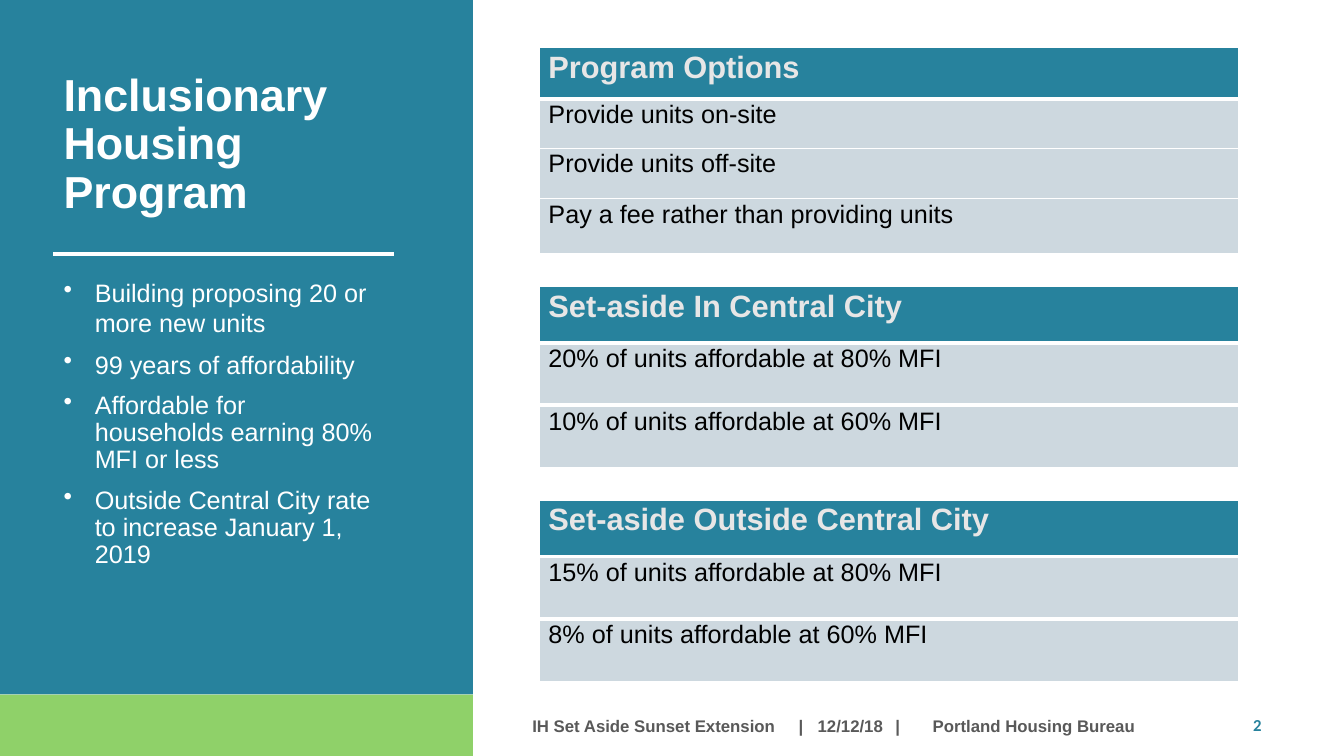
from lxml import etree
from pptx import Presentation
from pptx.dml.color import RGBColor
from pptx.enum import shapes, text
from pptx.oxml.ns import qn
from pptx.util import Inches, Pt

# Content
TITLE = "Inclusionary \vHousing\vProgram"
# Bullet text, line spacing, space before in points
BULLETS = [
    ("Building proposing 20 or more new units", None, 8.7),
    ("99 years of affordability", Pt(19.7), 9.9),
    ("Affordable for households earning 80% MFI or less", 0.9, 9.5),
    ("Outside Central City rate to increase January 1, 2019", 0.9, 9.5),
]
# Top, row heights, rule between body rows in points, rows (header first)
TABLES = [
    (0.47, (0.51, 0.49, 0.5, 0.55), 1,
     ("Program Options", "Provide units on-site", "Provide units off-site",
      "Pay a fee rather than providing units")),
    (2.84, (0.56, 0.62, 0.62), 3,
     ("Set-aside In Central City", "20% of units affordable at 80% MFI",
      "10% of units affordable at 60% MFI")),
    (4.96, (0.56, 0.62, 0.62), 3,
     ("Set-aside Outside Central City", "15% of units affordable at 80% MFI",
      "8% of units affordable at 60% MFI")),
]
FOOTER = "IH Set Aside Sunset Extension\t|\t12/12/18\t|\tPortland Housing Bureau"
FOOTER_TABS = (2.64, 2.83, 3.6, 3.97)
PAGE = "2"

COLORS = {"teal": "27829D", "green": "8FD169", "white": "FFFFFF", "head": "E7E6E6",
          "row": "CDD8DF", "black": "000000", "gray": "595959"}
PANEL_W, PANEL_H = 4.69, 6.89
TABLE_X, TABLE_W = 5.35, 6.93


def rgb(name):
    return RGBColor.from_string(COLORS[name])


def style(p, size, color, bold=False, font="Arial"):
    for r in p.runs:
        r.font.size, r.font.bold, r.font.name = Pt(size), bold, font
        r.font.color.rgb = rgb(color)


def set_frame(tf, top=0):
    tf.word_wrap = True
    tf.auto_size = text.MSO_AUTO_SIZE.NONE
    tf.vertical_anchor = text.MSO_ANCHOR.TOP
    tf.margin_left = tf.margin_right = tf.margin_bottom = 0
    tf.margin_top = Inches(top)


def add_text(s, box, top=0):
    tf = s.shapes.add_textbox(*map(Inches, box)).text_frame
    set_frame(tf, top)
    return tf


def add_panel(s, top, height, color):
    sp = s.shapes.add_shape(shapes.MSO_SHAPE.RECTANGLE, 0, Inches(top),
                            Inches(PANEL_W), Inches(height))
    sp.shadow.inherit = False
    sp.fill.solid()
    sp.fill.fore_color.rgb = rgb(color)
    sp.line.fill.background()


def set_borders(cell, top, bottom):
    tcPr = cell._tc.get_or_add_tcPr()
    for i, (side, width) in enumerate((("L", 1), ("R", 1), ("T", top), ("B", bottom))):
        ln = etree.Element(qn(f"a:ln{side}"), w=str(Pt(width)))
        fill = etree.SubElement(ln, qn("a:solidFill"))
        etree.SubElement(fill, qn("a:srgbClr"), val=COLORS["white"])
        tcPr.insert(i, ln)


def add_table(s, top, heights, rule, rows):
    frame = s.shapes.add_table(len(rows), 1, Inches(TABLE_X), Inches(top),
                               Inches(TABLE_W), Inches(sum(heights)))
    table = frame.table
    rules = [1, 3] + [rule] * (len(rows) - 2) + [1]
    for i, (label, height) in enumerate(zip(rows, heights)):
        head = i == 0
        table.rows[i].height = Inches(height)
        cell = table.cell(i, 0)
        cell.margin_left = Inches(0.09)
        cell.margin_right = cell.margin_bottom = 0
        cell.margin_top = Inches(0.03 if head else 0.02)
        cell.fill.solid()
        cell.fill.fore_color.rgb = rgb("teal" if head else "row")
        set_borders(cell, rules[i], rules[i + 1])
        p = cell.text_frame.paragraphs[0]
        p.text = label
        p.space_before = Pt(2.1 if head else 1.1)
        style(p, 22 if head else 18, "head" if head else "black", head)


prs = Presentation()
prs.slide_width, prs.slide_height = Inches(13.33), Inches(7.5)
s = prs.slides.add_slide(prs.slide_layouts[5])

# Left panel with rule
add_panel(s, 0, PANEL_H, "teal")
add_panel(s, PANEL_H, 7.5 - PANEL_H, "green")
rule = s.shapes.add_connector(shapes.MSO_CONNECTOR.STRAIGHT, Inches(0.53), Inches(2.52),
                              Inches(3.91), Inches(2.52))
rule.line.color.rgb = rgb("white")
rule.line.width = Pt(2.58)
etree.SubElement(rule._element.spPr, qn("a:effectLst"))

# Title, brought in front of the panel
title = s.shapes.title
title.left, title.top, title.width, title.height = map(Inches, (0.63, 0.64, 3.09, 1.55))
s.shapes._spTree.append(title._element)
set_frame(title.text_frame, 0.07)
title.text_frame.text = TITLE
p = title.text_frame.paragraphs[0]
p.alignment = text.PP_ALIGN.LEFT
p.line_spacing, p.space_before = Pt(34.7), Pt(5.2)
style(p, 32, "white", True)

# Bullets
tf = add_text(s, (0.63, 2.63, 3.09, 3.35), 0.12)
for i, (label, spacing, before) in enumerate(BULLETS):
    p = tf.add_paragraph() if i else tf.paragraphs[0]
    p.text = label
    p.line_spacing, p.space_before = spacing, Pt(before)
    style(p, 18, "white")
    pPr = p._p.get_or_add_pPr()
    pPr.set("marL", str(Inches(0.31)))
    pPr.set("indent", str(-Inches(0.31)))
    etree.SubElement(pPr, qn("a:buChar"), char="•")

# Tables
for spec_row in TABLES:
    add_table(s, *spec_row)

# Footer and page number
p = add_text(s, (5.28, 7.1, 6.6, 0.2)).paragraphs[0]
p.text = FOOTER
p.line_spacing = Pt(14.2)
style(p, 12, "gray", True)
tabs = etree.SubElement(p._p.get_or_add_pPr(), qn("a:tabLst"))
for pos in FOOTER_TABS:
    etree.SubElement(tabs, qn("a:tab"), pos=str(Inches(pos)), algn="l")

p = add_text(s, (12.43, 7.08, 0.14, 0.23), 0.01).paragraphs[0]
p.text = PAGE
p.space_before = Pt(0.4)
style(p, 12, "teal", True, "Calibri")

prs.save("out.pptx")
